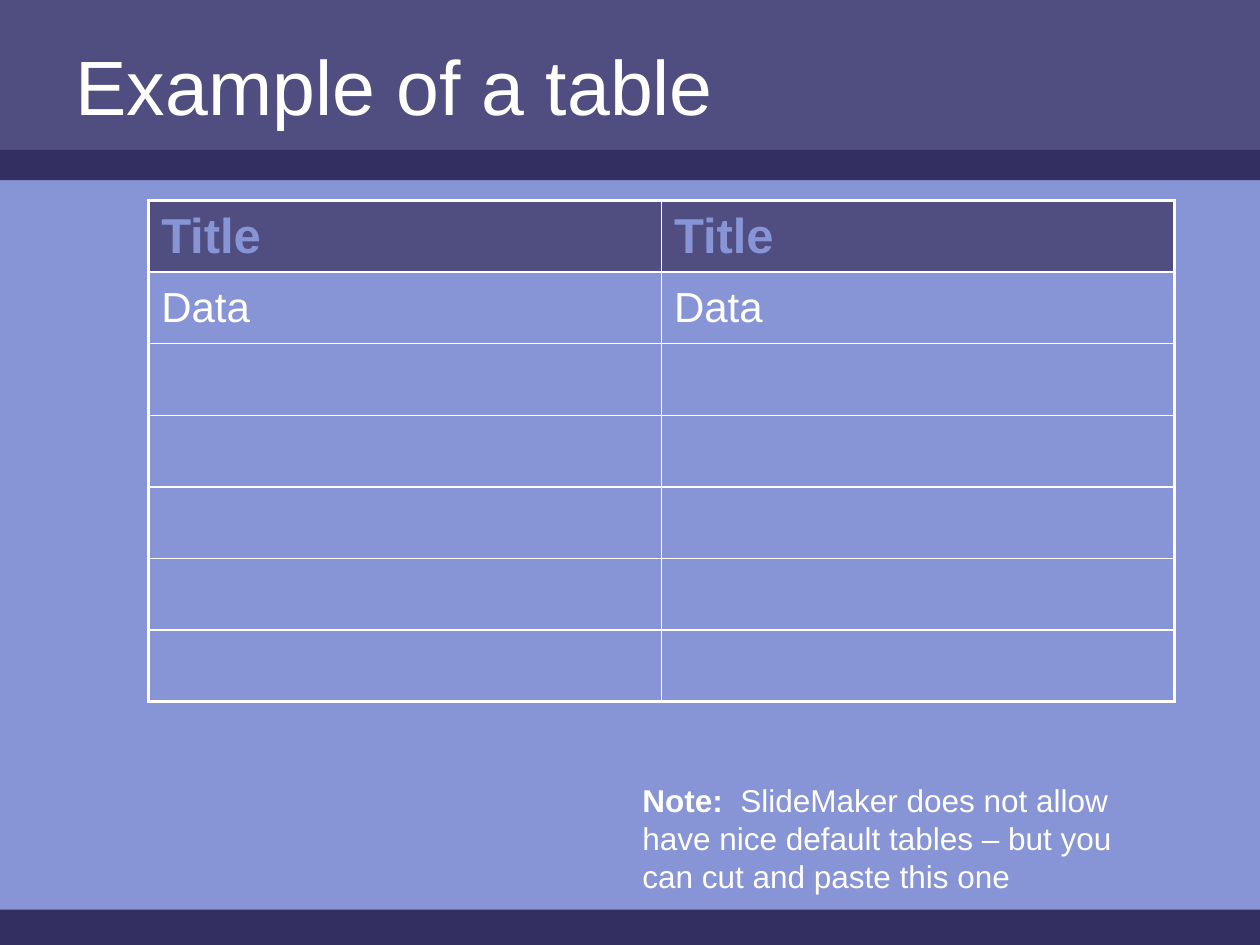
from lxml.etree import SubElement
from pptx import Presentation
from pptx.dml.color import RGBColor
from pptx.enum.shapes import MSO_SHAPE
from pptx.enum.text import MSO_ANCHOR, MSO_AUTO_SIZE, PP_ALIGN
from pptx.oxml.ns import qn
from pptx.util import Inches, Pt

WHITE = RGBColor(0xFF, 0xFF, 0xFF)
PERIWINKLE = RGBColor(0x87, 0x94, 0xD5)
SLATE = RGBColor(0x50, 0x4D, 0x80)
NAVY = RGBColor(0x34, 0x2F, 0x61)


def style_font(font, size, color, bold=False):
    font.name = "Arial"
    font.size = Pt(size)
    font.color.rgb = color
    font.bold = bold


def add_border(cell, side, width):
    line = SubElement(cell._tc.get_or_add_tcPr(), qn(f"a:ln{side}"), w=str(Pt(width)))
    fill = SubElement(line, qn("a:solidFill"))
    SubElement(fill, qn("a:srgbClr"), val=str(WHITE))


prs = Presentation()
prs.slide_width = Inches(10)
prs.slide_height = Inches(7.5)
slide = prs.slides.add_slide(prs.slide_layouts[5])
slide.background.fill.solid()
slide.background.fill.fore_color.rgb = PERIWINKLE

for top, height, color in [(0, 1.31, SLATE), (1.19, 0.24, NAVY), (7.22, 0.28, NAVY)]:
    band = slide.shapes.add_shape(
        MSO_SHAPE.RECTANGLE, 0, Inches(top), prs.slide_width, Inches(height))
    band.shadow.inherit = False
    band.fill.solid()
    band.fill.fore_color.rgb = color
    band.line.fill.background()

heading = slide.shapes.title
slide.shapes._spTree.append(heading._element)
heading.left, heading.top = Inches(0.5), Inches(0.28)
heading.width, heading.height = Inches(9.07), Inches(0.79)
heading.text_frame.text = "Example of a table"
heading.text_frame.vertical_anchor = MSO_ANCHOR.MIDDLE
heading.text_frame.auto_size = MSO_AUTO_SIZE.NONE
heading_line = heading.text_frame.paragraphs[0]
heading_line.alignment = PP_ALIGN.LEFT
style_font(heading_line.runs[0].font, 44, WHITE)

ROWS, COLS = 7, 2
grid = slide.shapes.add_table(
    ROWS, COLS, Inches(1.18), Inches(1.59), Inches(8.14), Inches(3.98)).table
grid.first_row = False
grid.horz_banding = False
row_texts = ["Title", "Data"] + [""] * (ROWS - 2)

for r, text in enumerate(row_texts):
    for c in range(COLS):
        cell = grid.cell(r, c)
        outer_sides = {"L": c == 0, "R": c == COLS - 1, "T": r == 0, "B": r == ROWS - 1}
        for side, is_outer in outer_sides.items():
            add_border(cell, side, 2.25 if is_outer else 1)
        cell.vertical_anchor = MSO_ANCHOR.MIDDLE
        cell.text_frame.text = text
        if r == 0:
            cell.fill.solid()
            cell.fill.fore_color.rgb = SLATE
        else:
            cell.fill.background()
        for run in cell.text_frame.paragraphs[0].runs:
            if r == 0:
                style_font(run.font, 28, PERIWINKLE, bold=True)
            else:
                style_font(run.font, 24, WHITE)

note = slide.shapes.add_textbox(Inches(5), Inches(6.15), Inches(4.21), Inches(1)).text_frame
note.word_wrap = True
note_parts = [
    ("Note:  ", True),
    ("SlideMaker does not allow have nice default tables – but you can cut and paste this one",
     False),
]
for text, bold in note_parts:
    run = note.paragraphs[0].add_run()
    run.text = text
    style_font(run.font, 18, WHITE, bold)

prs.save("out.pptx")
